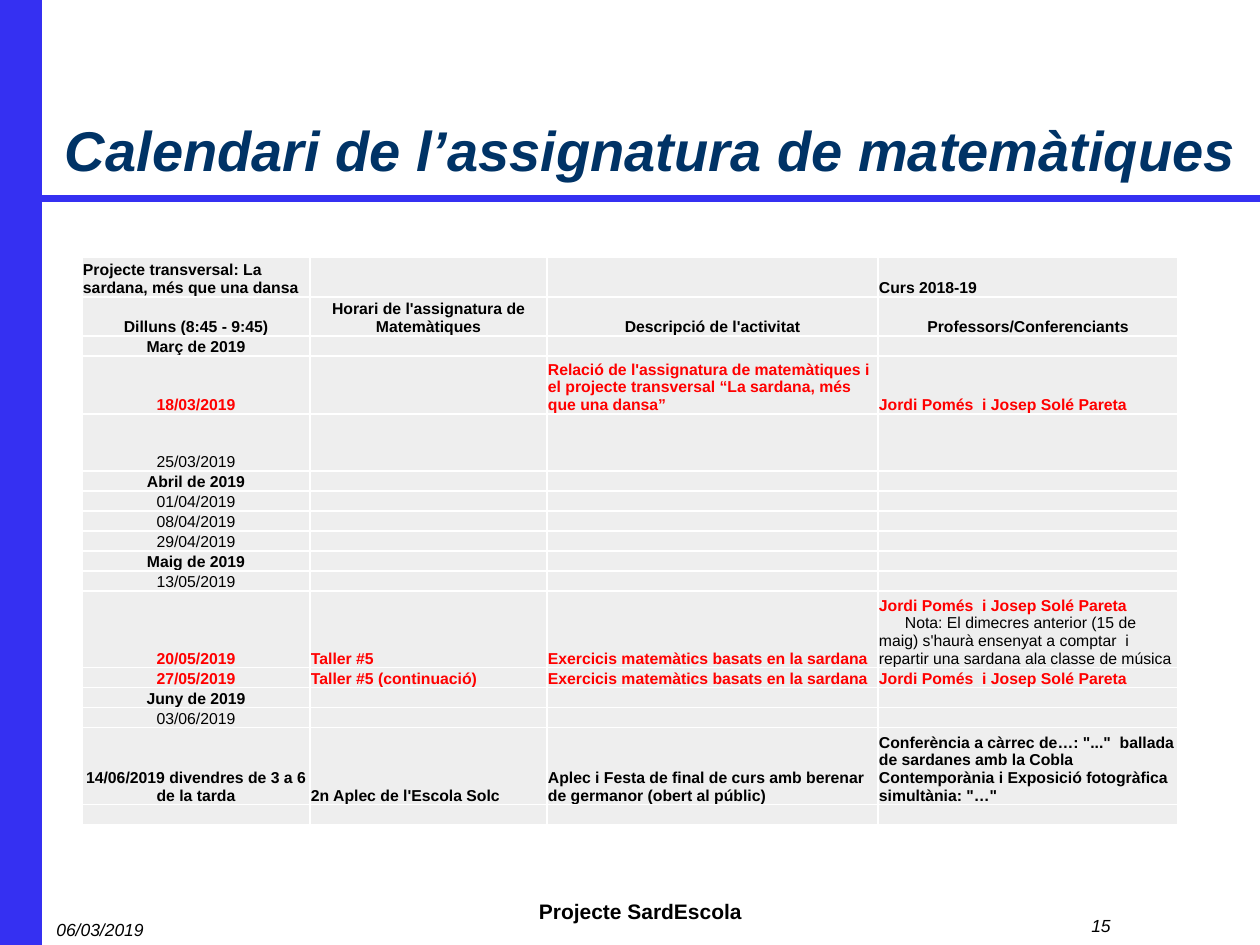
from lxml.etree import SubElement
from pptx import Presentation
from pptx.dml.color import RGBColor
from pptx.enum.shapes import MSO_CONNECTOR as LINE, MSO_SHAPE as SHAPE
from pptx.enum.text import MSO_ANCHOR as ANCHOR, PP_ALIGN as ALIGN
from pptx.oxml.ns import qn
from pptx.util import Emu, Pt

BLUE, NAVY, BLACK, RED = "3530F2", "003366", "000000", "FF0000"
GREY, WHITE = "EEEEEE", "FFFFFF"
HEAD, PLAIN, EVENT = (True, BLACK), (False, BLACK), (True, RED)

COLS = [228, 237, 331, 300]
LOW = 19
DUO = "Jordi Pomés  i Josep Solé Pareta"
DRILL = "Exercicis matemàtics basats en la sardana"
NOTE = ("Nota: El dimecres anterior (15 de maig) s'haurà ensenyat a comptar  i "
        "repartir una sardana ala classe de música")

# Row height, text style, cell texts
ROWS = [
    (40, HEAD, ["Projecte transversal: La sardana, més que una dansa", "", "", "Curs 2018-19"]),
    (37, HEAD, ["Dilluns (8:45 - 9:45)", "Horari de l'assignatura de Matemàtiques",
                "Descripció de l'activitat", "Professors/Conferenciants"]),
    (LOW, HEAD, ["Març de 2019"]),
    (55, EVENT, ["18/03/2019", "", "Relació de l'assignatura de matemàtiques i el projecte "
                 "transversal “La sardana, més que una dansa”", DUO]),
    (57, PLAIN, ["25/03/2019"]),
    (LOW, HEAD, ["Abril de 2019"]),
    (LOW, PLAIN, ["01/04/2019"]),
    (LOW, PLAIN, ["08/04/2019"]),
    (LOW, PLAIN, ["29/04/2019"]),
    (LOW, HEAD, ["Maig de 2019"]),
    (LOW, PLAIN, ["13/05/2019"]),
    (73, EVENT, ["20/05/2019", "Taller #5", DRILL, DUO]),
    (LOW, EVENT, ["27/05/2019", "Taller #5 (continuació)", DRILL, DUO]),
    (LOW, HEAD, ["Juny de 2019"]),
    (LOW, PLAIN, ["03/06/2019"]),
    (72, HEAD, ["14/06/2019 divendres de 3 a 6 de la tarda", "2n Aplec de l'Escola Solc",
                "Aplec i Festa de final de curs amb berenar de germanor (obert al públic)",
                "Conferència a càrrec de…: \"...\"  ballada de sardanes amb la Cobla "
                "Contemporània i Exposició fotogràfica simultània: \"…\""]),
    (LOW, HEAD, []),
]
NOTE_ROW = 11


def px(n):
    return Emu(n * 914400 // 126)


def color(code):
    return RGBColor.from_string(code)


def add_run(para, text, size, tint=BLACK, bold=False, italic=False):
    run = para.add_run()
    run.text = text
    font = run.font
    font.name, font.size = "Arial", Pt(size)
    font.bold, font.italic = bold, italic
    font.color.rgb = color(tint)


def add_text(slide, box, text, size, align, anchor=ANCHOR.MIDDLE, **style):
    frame = slide.shapes.add_textbox(*map(px, box)).text_frame
    frame.word_wrap = True
    frame.vertical_anchor = anchor
    para = frame.paragraphs[0]
    para.alignment = align
    add_run(para, text, size, **style)


def add_bar(slide, box):
    bar = slide.shapes.add_shape(SHAPE.RECTANGLE, *map(px, box))
    bar.shadow.inherit = False
    bar.fill.solid()
    bar.fill.fore_color.rgb = color(BLUE)
    bar.line.fill.background()


def add_rule(slide, ends):
    rule = slide.shapes.add_connector(LINE.STRAIGHT, *map(px, ends))
    rule.line.color.rgb = color(BLUE)
    rule.line.width = Pt(4)
    SubElement(rule._element.spPr, qn("a:effectLst"))


def style_cell(cell):
    """Set margins, white borders and grey fill."""
    cell.margin_left = cell.margin_right = cell.margin_top = px(1)
    cell.margin_bottom = 0
    cell.vertical_anchor = ANCHOR.BOTTOM
    props = cell._tc.get_or_add_tcPr()
    for side in ("lnL", "lnR", "lnT", "lnB"):
        edge = SubElement(props, qn("a:" + side), w=str(Pt(1)))
        fill = SubElement(edge, qn("a:solidFill"))
        SubElement(fill, qn("a:srgbClr"), val=WHITE)
    cell.fill.solid()
    cell.fill.fore_color.rgb = color(GREY)


def fill_cell(cell, text, style, align):
    para = cell.text_frame.paragraphs[0]
    para.alignment = align
    if text:
        bold, tint = style
        add_run(para, text, 9, tint, bold)
    else:
        SubElement(para._p, qn("a:endParaRPr"), sz="900")


def add_note(cell):
    """Add the note as a paragraph with an indented first line."""
    para = cell.text_frame.add_paragraph()
    para.alignment = ALIGN.LEFT
    props = para._p.get_or_add_pPr()
    props.set("marL", "0")
    props.set("indent", str(px(26)))
    add_run(para, NOTE, 9)


def add_plan(slide):
    high = sum(row[0] for row in ROWS)
    box = (82, 257, sum(COLS), high)
    table = slide.shapes.add_table(len(ROWS), len(COLS), *map(px, box)).table
    table.first_row = table.horz_banding = False
    for col, width in zip(table.columns, COLS):
        col.width = px(width)
    for r, (height, style, texts) in enumerate(ROWS):
        table.rows[r].height = px(height)
        for c in range(len(COLS)):
            cell = table.cell(r, c)
            style_cell(cell)
            mid = r == 1 or (c == 0 and r > 0)
            text = texts[c] if c < len(texts) else ""
            fill_cell(cell, text, style, ALIGN.CENTER if mid else ALIGN.LEFT)
    add_note(table.cell(NOTE_ROW, len(COLS) - 1))


def main():
    deck = Presentation()
    deck.slide_width, deck.slide_height = px(1260), px(945)
    slide = deck.slides.add_slide(deck.slide_layouts[6])
    add_rule(slide, (29, 199, 1260, 199))
    add_bar(slide, (0, 0, 42, 945))
    add_text(slide, (343, 880, 595, 63), "Projecte SardEscola", 12, ALIGN.CENTER, bold=True)
    add_text(slide, (44, 32, 1205, 157), "Calendari de l’assignatura de matemàtiques", 32,
             ALIGN.RIGHT, ANCHOR.BOTTOM, tint=NAVY, bold=True, italic=True)
    add_plan(slide)
    add_text(slide, (44, 914, 199, 31), "06/03/2019", 10, ALIGN.LEFT, italic=True)
    add_text(slide, (892, 904, 231, 42), "15", 10, ALIGN.RIGHT, italic=True)
    deck.save("out.pptx")


if __name__ == "__main__":
    main()
